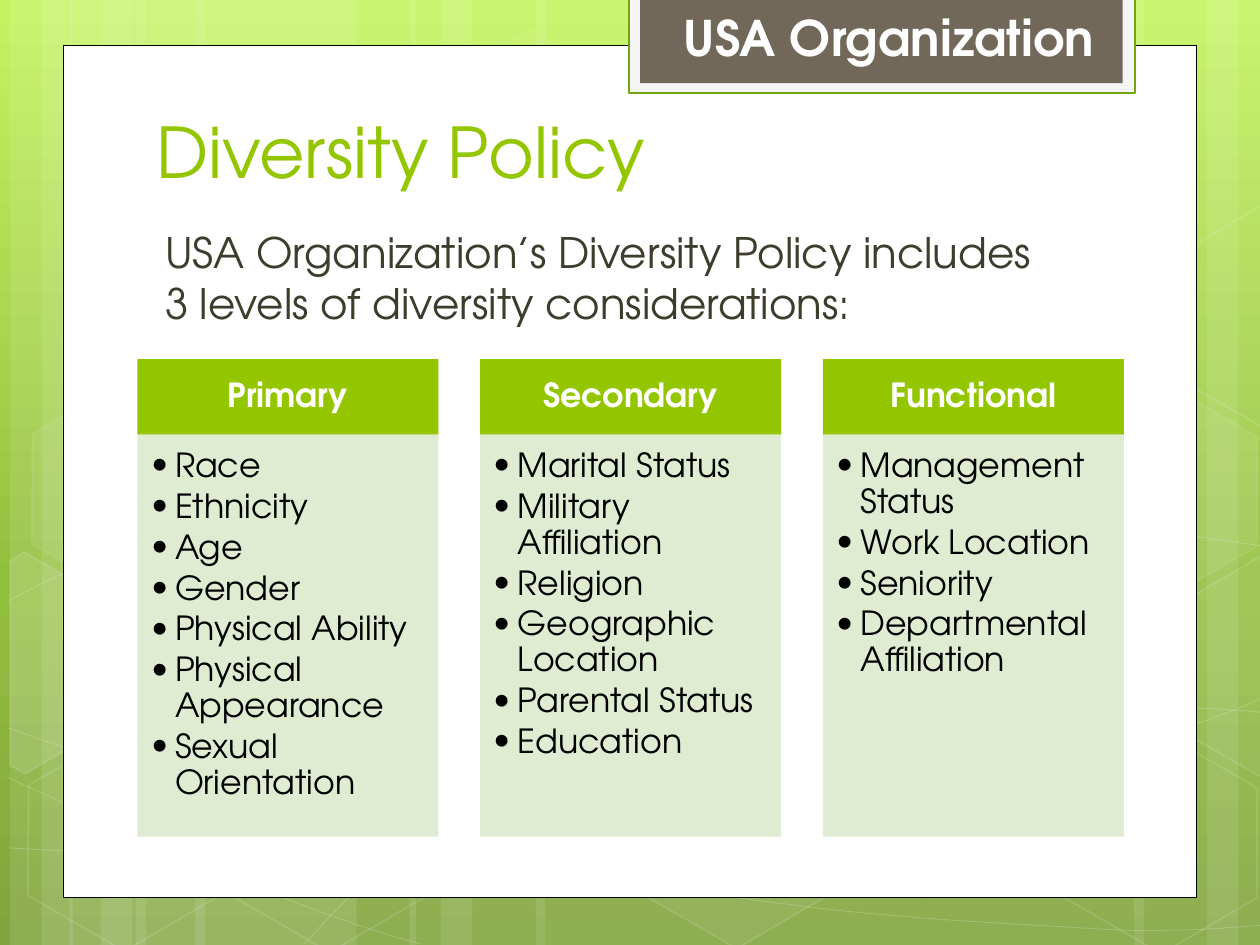
from math import cos, radians, sin

from lxml.etree import SubElement
from pptx import Presentation
from pptx.dml.color import RGBColor
from pptx.enum.shapes import MSO_SHAPE
from pptx.enum.text import MSO_ANCHOR, PP_ALIGN
from pptx.oxml.ns import qn
from pptx.util import Inches, Pt

COLORS = {
    "white": "FFFFFF", "black": "000000", "green": "94C600", "body": "3E3D2D",
    "pale": "DCEACC", "tab": "71685A", "tab_edge": "F5F5F5", "tab_line": "74A510",
}
FONT = "TeX Gyre Adventor"
SLIDE_W, SLIDE_H = 10, 7.5

TAB = "USA Organization"
TITLE = "Diversity Policy"
INTRO = "USA Organization’s Diversity Policy includes 3 levels of diversity considerations:"
LEVELS = {
    "Primary": ["Race", "Ethnicity", "Age", "Gender", "Physical Ability",
                "Physical Appearance", "Sexual Orientation"],
    "Secondary": ["Marital Status", "Military Affiliation", "Religion",
                  "Geographic Location", "Parental Status", "Education"],
    "Functional": ["Management Status", "Work Location", "Seniority",
                   "Departmental Affiliation"],
}

# Background decoration
SKY = [(0, "C3F35F"), (62, "93BF3F"), (100, "81A53E")]  # percent, colour
STRIPES = [  # left, width
    (1.08, 1.75), (0.08, 0.5), (0.33, 0.83), (1.55, 1.75), (0.55, 0.5), (0.8, 0.83),
    (7.33, 1.75), (9.58, 0.5), (9, 0.83), (4.25, 3.08), (3.25, 0.5), (3.5, 0.83),
]
# Start point, then cubic segments of two control points and an end point
CURVES = [
    [(0.07, 6.73), (0.61, 6.76), (1.15, 6.79), (1.9, 6.78), (2.65, 6.77), (3.58, 6.75),
     (4.58, 6.65), (5.58, 6.55), (7, 6.36), (7.92, 6.17), (8.83, 5.98), (9.77, 5.68),
     (10.07, 5.51)],
    [(0.07, 4.77), (0.36, 4.61), (0.65, 4.46), (1.21, 4.31), (1.78, 4.16), (2.59, 3.94),
     (3.47, 3.87), (4.36, 3.8), (5.44, 3.79), (6.54, 3.87), (7.64, 3.95), (9.47, 4.26),
     (10.07, 4.34)],
    [(0.06, 6.17), (1.27, 6.72), (2.47, 7.27), (3.34, 7.49)],
    [(0.07, 5.78), (0.38, 5.89), (0.7, 6), (1.28, 6.16), (1.86, 6.31), (2.73, 6.56),
     (3.57, 6.73), (4.4, 6.9), (5.45, 7.08), (6.28, 7.18), (7.11, 7.29), (8, 7.33),
     (8.53, 7.36), (9.05, 7.4), (9.19, 7.38), (9.45, 7.38), (9.71, 7.37), (9.89, 7.35),
     (10.07, 7.34)],
    [(2.42, 7.49), (2.6, 7.29), (2.78, 7.09), (3.02, 6.91), (3.26, 6.73), (3.6, 6.53),
     (3.88, 6.39), (4.16, 6.25), (4.33, 6.19), (4.7, 6.09), (5.06, 5.99), (5.73, 5.85),
     (6.08, 5.78), (6.44, 5.71), (6.49, 5.71), (6.8, 5.69), (7.11, 5.66), (7.6, 5.63),
     (7.94, 5.62), (8.29, 5.61), (8.86, 5.62), (8.86, 5.62), (8.86, 5.62), (9.53, 5.62),
     (9.53, 5.62), (9.71, 5.63), (9.88, 5.64), (9.97, 5.65), (10.06, 5.66), (10.03, 5.65),
     (10.06, 5.66)],
]
TILT = 30
HEXAGONS = [  # left, top, fill opacity, line opacity
    (3.34, 0.36, 4, 8), (4.97, 5.89, 6, 12), (0.11, 5.91, 0, 12), (0.14, 3.12, 7, 8),
    (1.74, 5.92, 0, 12), (7.53, 4.53, 10, 12), (8.34, 5.93, 0, 12), (8.34, 3.14, 7, 8),
]
CUT_HEXAGONS = [  # centre of rotation, corners, fill opacity
    ((0.36, 5.35), [(0.08, 4.45), (0.19, 4.38), (0.96, 4.82), (0.95, 5.7), (0.2, 6.14),
                    (0.08, 6.07)], 10),
    ((9.85, 5.2), [(9.26, 4.85), (10.01, 4.41), (10.09, 4.46), (10.09, 6.13), (10.02, 6.17),
                   (9.26, 5.73)], 4),
    ((9.85, 2.41), [(9.26, 2.07), (10.01, 1.63), (10.1, 1.68), (10.09, 3.35), (10.02, 3.39),
                    (9.26, 2.95)], 0),
]

# Column grid
COLUMN_LEFT, COLUMN_PITCH, COLUMN_W = 1.09, 2.72, 2.39
HEADER_TOP, HEADER_H, LIST_H = 2.85, 0.6, 3.19
BULLET_INDENT = 0.19


def paint(fill, color):
    fill.solid()
    fill.fore_color.rgb = RGBColor.from_string(COLORS[color])


def set_opacity(parent, opacity):
    if opacity < 100:
        for color in parent.iter(qn("a:srgbClr")):
            SubElement(color, qn("a:alpha"), val=str(opacity * 1000))


def style(shape, fill=None, opacity=100, line=None, width=1, line_opacity=100):
    """Apply fill and outline; a missing colour or zero opacity means none."""
    shape.shadow.inherit = False
    if fill and opacity:
        paint(shape.fill, fill)
        set_opacity(shape.element.spPr.find(qn("a:solidFill")), opacity)
    else:
        shape.fill.background()
    if line:
        paint(shape.line.fill, line)
        shape.line.width = Pt(width)
        set_opacity(shape.element.spPr.find(qn("a:ln")), line_opacity)
    else:
        shape.line.fill.background()
    return shape


def add_box(slide, box, kind=MSO_SHAPE.RECTANGLE, **look):
    return style(slide.shapes.add_shape(kind, *map(Inches, box)), **look)


def add_outline(slide, points, close, **look):
    start, *rest = [(Inches(x), Inches(y)) for x, y in points]
    builder = slide.shapes.build_freeform(*start)
    builder.add_line_segments(rest, close=close)
    return style(builder.convert_to_shape(), **look)


def bend(shape):
    """Join each three straight segments into one cubic segment."""
    path = next(shape.element.iter(qn("a:path")))
    segments = path.findall(qn("a:lnTo"))
    for i in range(0, len(segments), 3):
        cubic = SubElement(path, qn("a:cubicBezTo"))
        for segment in segments[i:i + 3]:
            cubic.append(segment[0])
            path.remove(segment)


def turn_back(point, centre):
    dx, dy = point[0] - centre[0], point[1] - centre[1]
    c, s = cos(radians(TILT)), sin(radians(TILT))
    return centre[0] + dx * c + dy * s, centre[1] - dx * s + dy * c


def write(shape, lines, size, color, bold=False, align=PP_ALIGN.LEFT,
          anchor=MSO_ANCHOR.TOP, insets=(0.1, 0.05, 0.1, 0.05), wrap=True):
    frame = shape.text_frame
    frame.word_wrap = wrap
    frame.vertical_anchor = anchor
    (frame.margin_left, frame.margin_top,
     frame.margin_right, frame.margin_bottom) = map(Inches, insets)
    for i, line in enumerate(lines):
        paragraph = frame.add_paragraph() if i else frame.paragraphs[0]
        paragraph.alignment = align
        run = paragraph.add_run()
        run.text = line
        run.font.name, run.font.size, run.font.bold = FONT, Pt(size), bold
        run.font.color.rgb = RGBColor.from_string(COLORS[color])
    return frame.paragraphs


def add_text(slide, box, text, size, color, **options):
    return write(slide.shapes.add_textbox(*map(Inches, box)), [text], size, color, **options)


def add_backdrop(slide):
    fill = slide.background.fill
    fill.gradient()
    fill.gradient_angle = 270
    stops = next(slide.element.iter(qn("a:gsLst")))
    for stop in list(stops):
        stops.remove(stop)
    for percent, color in SKY:
        stop = SubElement(stops, qn("a:gs"), pos=str(percent * 1000))
        SubElement(stop, qn("a:srgbClr"), val=color)
    for left, width in STRIPES:
        add_box(slide, (left, 0, width, SLIDE_H), fill="white", opacity=10)
    for nodes in CURVES:
        bend(add_outline(slide, nodes, False, line="white", width=0.5, line_opacity=20))
    for left, top, opacity, line_opacity in HEXAGONS:
        hexagon = add_box(slide, (left, top, 1.75, 1.52), MSO_SHAPE.HEXAGON, fill="white",
                          opacity=opacity, line="white", line_opacity=line_opacity)
        hexagon.adjustments[0], hexagon.adjustments[1] = 0.285, 1.155
        hexagon.rotation = TILT
    for centre, corners, opacity in CUT_HEXAGONS:
        upright = [turn_back(corner, centre) for corner in corners]
        add_outline(slide, upright, True, fill="white", opacity=opacity,
                    line="white", line_opacity=12).rotation = TILT


def add_level(slide, column, level, items):
    left = COLUMN_LEFT + column * COLUMN_PITCH
    header = add_box(slide, (left, HEADER_TOP, COLUMN_W, HEADER_H), fill="green")
    write(header, [level], 19, "white", bold=True, align=PP_ALIGN.CENTER,
          anchor=MSO_ANCHOR.MIDDLE, insets=(0.15, 0.08, 0.15, 0.08))[0].line_spacing = 0.9
    panel = add_box(slide, (left, HEADER_TOP + HEADER_H, COLUMN_W, LIST_H),
                    fill="pale", opacity=90)
    for item in write(panel, items, 19, "black", insets=(0.11, 0.11, 0.15, 0.17)):
        item.line_spacing, item.space_after = 0.9, Pt(2.85)
        properties = item._p.get_or_add_pPr()
        properties.set("marL", str(Inches(BULLET_INDENT)))
        properties.set("indent", str(-Inches(BULLET_INDENT)))
        SubElement(properties, qn("a:buFont"), typeface=FONT)
        SubElement(properties, qn("a:buChar"), char="•")


def main():
    deck = Presentation()
    deck.slide_width, deck.slide_height = Inches(SLIDE_W), Inches(SLIDE_H)
    slide = deck.slides.add_slide(deck.slide_layouts[6])
    add_backdrop(slide)
    add_box(slide, (0.5, 0.36, 9, 6.76), fill="white", line="black", width=0.5)
    add_box(slide, (4.99, -0.02, 4.02, 0.76), fill="tab_edge", line="tab_line", width=1.25)
    add_box(slide, (5.08, -0.02, 3.83, 0.68), fill="tab")
    add_text(slide, (1.14, 0.33, 7.68, 1.25), TITLE, 40, "green", anchor=MSO_ANCHOR.BOTTOM)
    intro = add_text(slide, (1.14, 1.75, 7.41, 3.84), INTRO, 24, "body",
                     insets=(0.17, 0.05, 0.1, 0.05))
    intro[0].space_before = Pt(4.8)
    add_text(slide, (5.33, 0.01, 3.51, 0.57), TAB, 28, "white", bold=True, wrap=False)
    for column, (level, items) in enumerate(LEVELS.items()):
        add_level(slide, column, level, items)
    deck.save("out.pptx")


if __name__ == "__main__":
    main()
